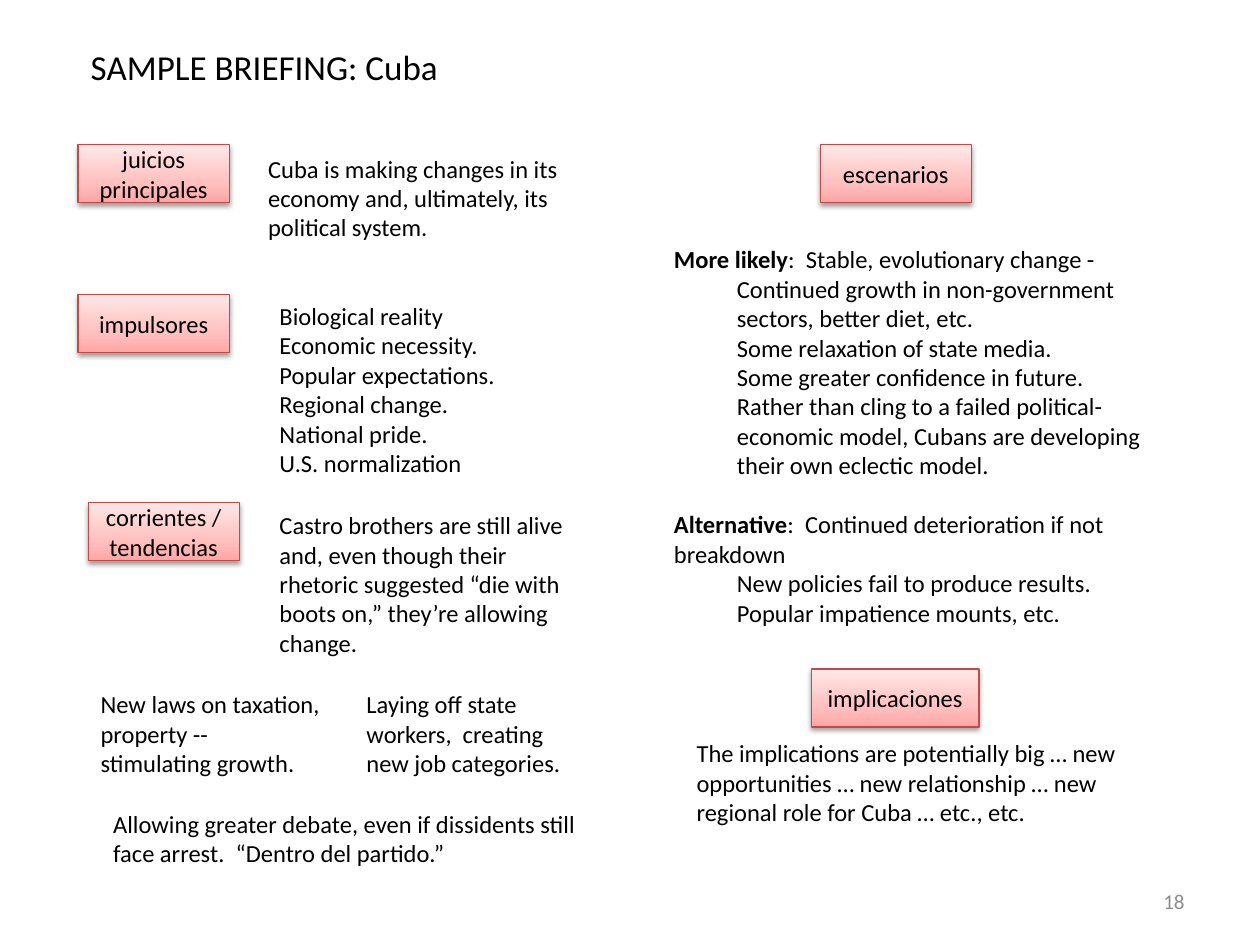
from lxml import etree
from pptx import Presentation, util as u
from pptx.dml.color import RGBColor
from pptx.enum import shapes, text
from pptx.oxml import parse_xml
from pptx.oxml.ns import nsdecls, qn

HUES = {"ink": "000000", "edge": "BF4C48", "deep": "FFA6A5",
        "mid": "FFC0BF", "pale": "FFE7E7", "gray": "8C8C8C"}
STOPS = [("deep", 0), ("mid", 35), ("pale", 100)]
LEFT, MID, RIGHT = text.PP_ALIGN.LEFT, text.PP_ALIGN.CENTER, text.PP_ALIGN.RIGHT
TOP, HALF = text.MSO_ANCHOR.TOP, text.MSO_ANCHOR.MIDDLE


class Deck:
    face = "Calibri"

    def __init__(self):
        self.prs = Presentation()
        self.prs.slide_width, self.prs.slide_height = u.Inches(10), u.Inches(7.5)
        self.slide = self.prs.slides.add_slide(self.prs.slide_layouts[5])

    def letter(self, shape, lines, size=14, hue="ink", align=LEFT, anchor=TOP):
        frame = shape.text_frame
        look = {"word_wrap": True, "auto_size": text.MSO_AUTO_SIZE.NONE,
                "vertical_anchor": anchor}
        for key, value in look.items():
            setattr(frame, key, value)
        for i, line in enumerate(lines):
            para = frame.add_paragraph() if i else frame.paragraphs[0]
            para.alignment = align
            lead, body, level, gap = line if isinstance(line, tuple) else ("", line, 0, 0)
            para.level, para.space_before = level, u.Pt(gap)
            if level:
                props = para._p.get_or_add_pPr()
                props.set("marL", str(u.Inches(0.5)))
                props.set("indent", "0")
            for words, bold in ((lead, True), (body, False)):
                if words:
                    run = para.add_run()
                    run.text = words
                    font = {"name": self.face, "size": u.Pt(size), "bold": bold}
                    for key, value in font.items():
                        setattr(run.font, key, value)
                    run.font.color.rgb = RGBColor.from_string(HUES[hue])

    def title(self, words, *box):
        shape = self.slide.shapes.title
        names = ("left", "top", "width", "height")
        for key, value in zip(names, box):
            setattr(shape, key, u.Inches(value))
        self.letter(shape, [words], size=20)

    def note(self, lines, *box, **style):
        shape = self.slide.shapes.add_textbox(*map(u.Inches, box))
        self.letter(shape, lines, **style)

    def label(self, words, left, top, width=1.2):
        box = map(u.Inches, (left, top, width, 0.46))
        shape = self.slide.shapes.add_shape(shapes.MSO_SHAPE.RECTANGLE, *box)
        shape.line.color.rgb = RGBColor.from_string(HUES["edge"])
        shape.line.width = u.Pt(0.75)
        self.shade(shape)
        self.letter(shape, [words], align=MID, anchor=HALF)

    def shade(self, shape):
        shape.fill.gradient()
        shape.fill.gradient_angle = 90
        stops = shape._element.spPr.find(qn("a:gradFill")).find(qn("a:gsLst"))
        for stop in list(stops):
            stops.remove(stop)
        for hue, pos in STOPS:
            stop = etree.SubElement(stops, qn("a:gs"), pos=str(pos * 1000))
            etree.SubElement(stop, qn("a:srgbClr"), val=HUES[hue])
        shape._element.spPr.append(parse_xml(
            f'<a:effectLst {nsdecls("a")}><a:outerShdw blurRad="{u.Pt(3.1)}" '
            f'dist="{u.Pt(1.6)}" dir="5400000" rotWithShape="0">'
            f'<a:srgbClr val="{HUES["ink"]}"><a:alpha val="38000"/></a:srgbClr>'
            '</a:outerShdw></a:effectLst>'))


def main():
    deck = Deck()
    deck.title("SAMPLE BRIEFING: Cuba", 0.62, 0.31, 6.25, 0.44)

    deck.label("juicios principales", 0.62, 1.15)
    deck.label("impulsores", 0.62, 2.34)
    deck.label("corrientes / tendencias", 0.7, 3.99)
    deck.label("escenarios", 6.51, 1.15)
    deck.label("implicaciones", 6.44, 5.31, 1.33)

    deck.note(["Cuba is making changes in its economy and, ultimately, "
               "its political system."], 2.03, 1.17, 2.67, 0.81)
    deck.note(["Biological reality", "Economic necessity.", "Popular expectations.",
               "Regional change.", "National pride.", "U.S. normalization"],
              2.12, 2.34, 2.64, 1.51)
    deck.note(["Castro brothers are still alive and, even though their rhetoric "
               "suggested “die with boots on,” they’re allowing change."],
              2.12, 4, 2.64, 1.88)
    deck.note(["New laws on taxation, property -- stimulating growth."],
              0.7, 5.42, 1.96, 0.81)
    deck.note(["Laying off state workers,  creating new job categories."],
              2.81, 5.42, 1.92, 0.81)
    deck.note(["Allowing greater debate, even if dissidents still face arrest.  "
               "“Dentro del partido.”"], 0.8, 6.37, 3.9, 0.57)

    likely = ["Continued growth in non-government sectors, better diet, etc.",
              "Some relaxation of state media.",
              "Some greater confidence in future.",
              "Rather than cling to a failed political-economic model, "
              "Cubans are developing their own eclectic model."]
    other = ["New policies fail to produce results.",
             "Popular impatience mounts, etc."]
    deck.note([("More likely", ":  Stable, evolutionary change -", 0, 0),
               *[("", line, 1, 0) for line in likely],
               ("Alternative", ":  Continued deterioration if not breakdown", 0, 17),
               *[("", line, 1, 0) for line in other]],
              5.25, 1.89, 4.11, 3.16)
    deck.note(["The implications are potentially big … new opportunities … "
               "new relationship … new regional role for Cuba … etc., etc."],
              5.43, 5.81, 3.75, 0.81)
    deck.note(["18"], 7.17, 6.95, 2.33, 0.4,
              size=12, hue="gray", align=RIGHT, anchor=HALF)
    deck.prs.save("out.pptx")


if __name__ == "__main__":
    main()
